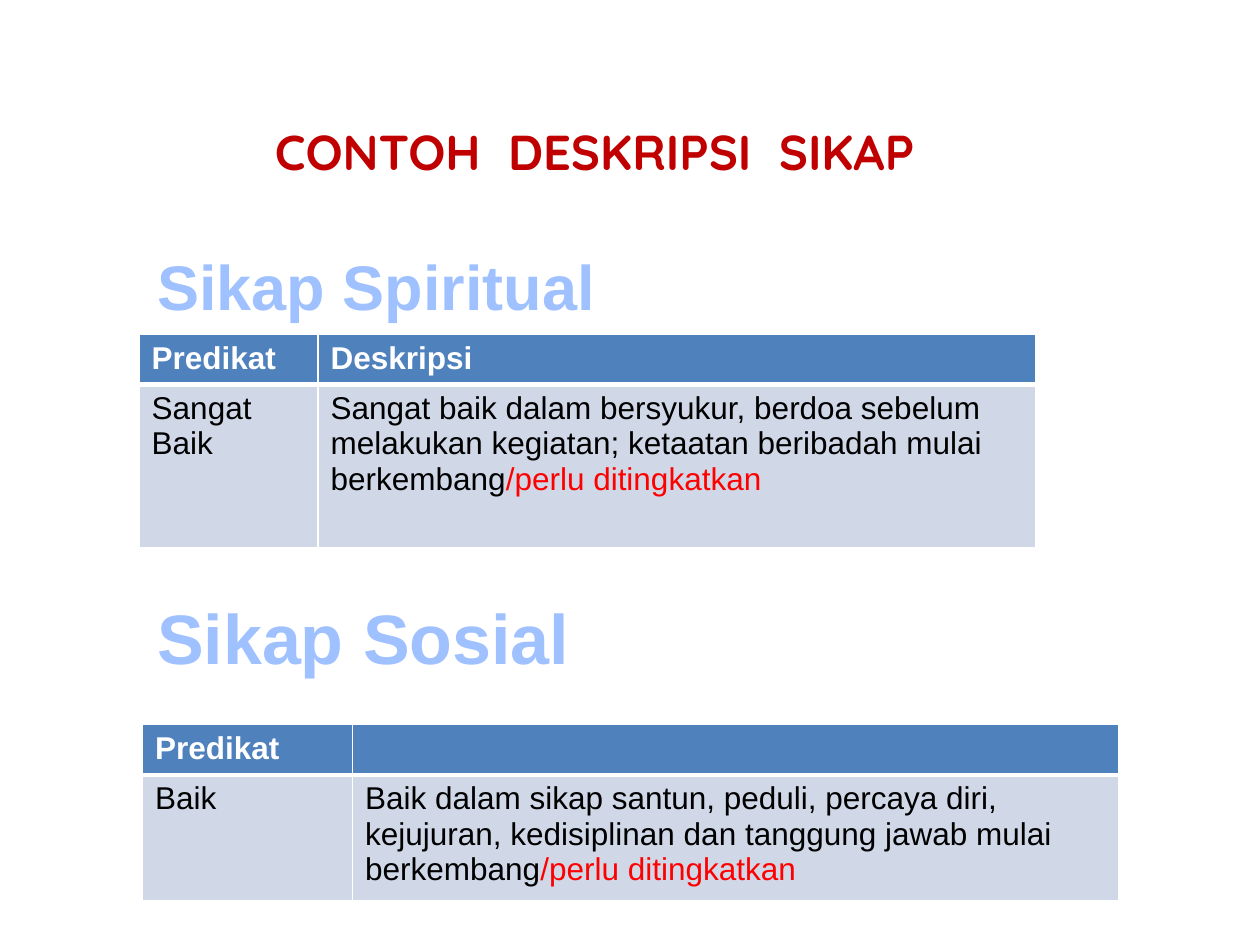
from lxml.etree import SubElement
from pptx import Presentation
from pptx.dml.color import RGBColor
from pptx.enum.text import MSO_AUTO_SIZE, PP_ALIGN
from pptx.oxml import parse_xml
from pptx.oxml.ns import nsdecls, qn
from pptx.util import Pt

COLORS = {
    "title": "C00000", "header": "4F81BD", "body": "D0D8E8", "white": "FFFFFF",
    "black": "000000", "red": "FF0000", "outline": "467AB8",
    "pale": "BFD3F9", "sky": "A0C1FF", "navy": "003D85",
}
GRADIENT = [(0, "pale"), (9, "sky"), (50, "navy"), (79, "sky"), (100, "pale")]

TITLE = ("CONTOH  DESKRIPSI  SIKAP", (150, 66, 426, 41))
HEADINGS = [
    ("Sikap Spiritual", 36, (81.5, 138, 267, 51)),
    ("Sikap Sosial", 40, (81.5, 336, 252, 55.5)),
]
IMPROVE = ("/perlu ditingkatkan", "red")
TABLES = [
    {
        "at": (79.5, 191), "columns": (102.25, 410.25), "rows": (28.8, 93.2),
        "header": ("Predikat", "Deskripsi"),
        "grade": "Sangat Baik",
        "description": "Sangat baik dalam bersyukur, berdoa sebelum melakukan kegiatan; "
                       "ketaatan beribadah mulai berkembang",
    },
    {
        "at": (81.5, 414), "columns": (120, 437.75), "rows": (28.8, 72),
        "header": ("Predikat", ""),
        "grade": "Baik",
        "description": "Baik dalam sikap santun, peduli, percaya diri, kejujuran, "
                       "kedisiplinan dan tanggung jawab mulai berkembang",
    },
]


def rgb(name):
    return RGBColor.from_string(COLORS[name])


def add_span(para, text, size, font="Arial", bold=False, color=None):
    span = para.add_run()
    span.text = text
    span.font.size, span.font.name, span.font.bold = Pt(size), font, bold
    if color:
        span.font.color.rgb = rgb(color)
    return span


def add_box(slide, frame, wrap):
    box = slide.shapes.add_textbox(*map(Pt, frame))
    box.text_frame.word_wrap = wrap
    box.text_frame.auto_size = MSO_AUTO_SIZE.SHAPE_TO_FIT_TEXT
    return box.text_frame.paragraphs[0]


def paint_gradient(span):
    """Give the letters a vertical gradient and a thin outline."""
    stops = "".join(
        f'<a:gs pos="{place * 1000}"><a:srgbClr val="{COLORS[name]}"/></a:gs>'
        for place, name in GRADIENT)
    outline = parse_xml(
        f'<a:ln {nsdecls("a")} w="{Pt(0.83)}"><a:solidFill>'
        f'<a:srgbClr val="{COLORS["outline"]}"/></a:solidFill></a:ln>')
    fill = parse_xml(
        f'<a:gradFill {nsdecls("a")}><a:gsLst>{stops}</a:gsLst>'
        '<a:lin ang="5400000"/></a:gradFill>')
    properties = span.font._element
    properties.insert(0, outline)
    properties.insert(1, fill)


def style_cell(cell, is_header):
    cell.fill.solid()
    cell.fill.fore_color.rgb = rgb("header" if is_header else "body")
    properties = cell._tc.get_or_add_tcPr()
    thick = "lnB" if is_header else "lnT"
    for index, side in enumerate(("lnL", "lnR", "lnT", "lnB")):
        width = Pt(3 if side == thick else 1)
        line = SubElement(properties, qn(f"a:{side}"), w=str(width))
        SubElement(SubElement(line, qn("a:solidFill")), qn("a:srgbClr"), val=COLORS["white"])
        properties.insert(index, line)


def add_attitude_table(slide, data):
    columns, rows = data["columns"], data["rows"]
    frame = (*data["at"], sum(columns), sum(rows))
    table = slide.shapes.add_table(len(rows), len(columns), *map(Pt, frame)).table
    for column, width in zip(table.columns, columns):
        column.width = Pt(width)
    for row, height in zip(table.rows, rows):
        row.height = Pt(height)
    content = [
        [[(text, "white")] for text in data["header"]],
        [[(data["grade"], "black")], [(data["description"], "black"), IMPROVE]],
    ]
    for row_index, row in enumerate(content):
        for column_index, spans in enumerate(row):
            cell = table.cell(row_index, column_index)
            is_header = row_index == 0
            style_cell(cell, is_header)
            for text, color in spans:
                if text:
                    add_span(cell.text_frame.paragraphs[0], text, 18,
                             bold=is_header, color=color)


def main():
    deck = Presentation()
    deck.slide_width, deck.slide_height = Pt(720), Pt(540)
    page = deck.slides.add_slide(deck.slide_layouts[6])

    text, frame = TITLE
    add_span(add_box(page, frame, True), text, 28, "Quicksand", True, "title")
    for text, size, frame in HEADINGS:
        para = add_box(page, frame, False)
        para.alignment = PP_ALIGN.CENTER
        paint_gradient(add_span(para, text, size, bold=True))
    for data in TABLES:
        add_attitude_table(page, data)
    deck.save("out.pptx")


if __name__ == "__main__":
    main()
